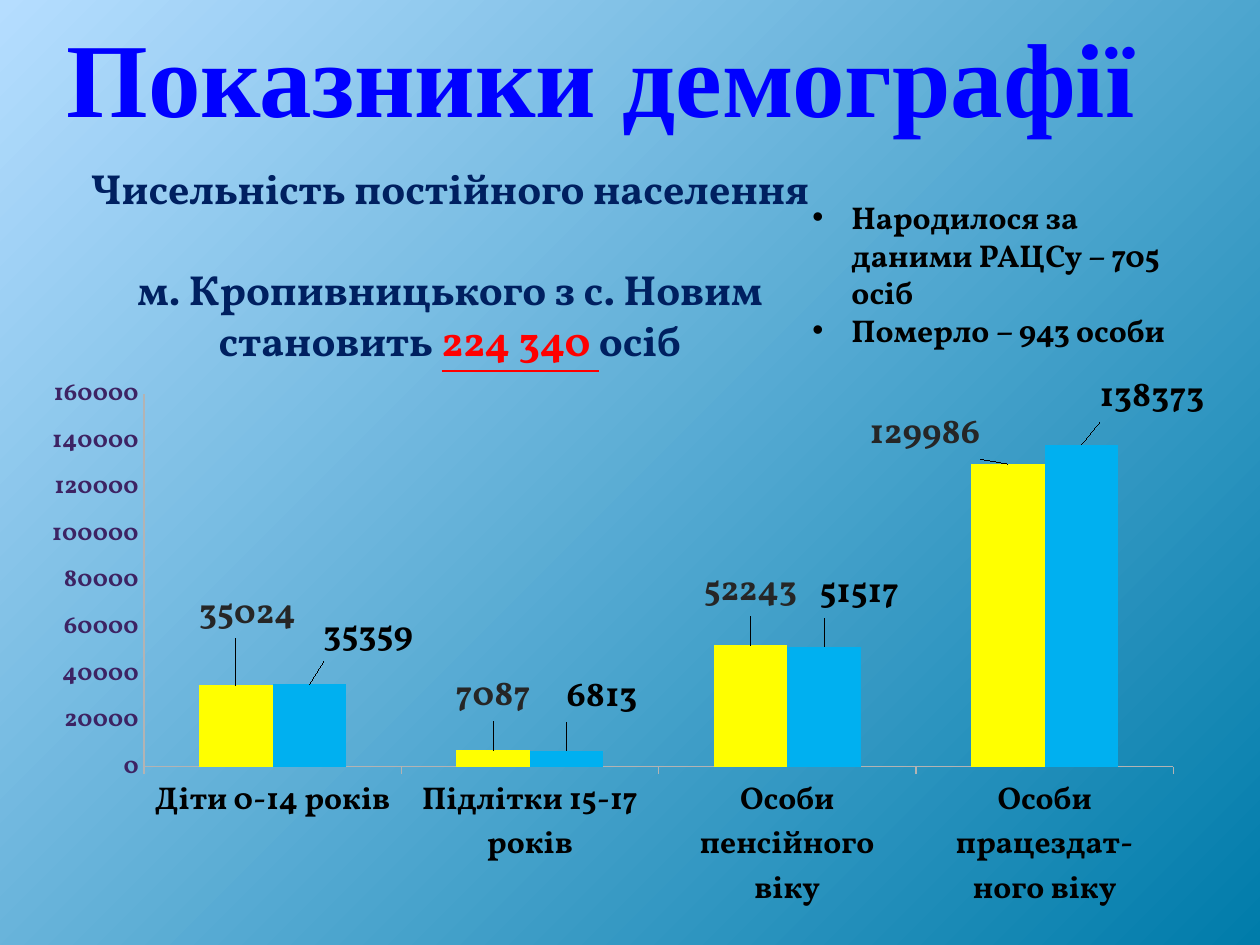
"""Build the demographic indicators slide with a clustered column chart."""
from lxml import etree
from pptx import Presentation
from pptx.chart.data import CategoryChartData
from pptx.dml.color import RGBColor
from pptx.enum.chart import XL_CHART_TYPE, XL_LABEL_POSITION, XL_TICK_MARK
from pptx.enum.text import MSO_ANCHOR, MSO_AUTO_SIZE, PP_ALIGN
from pptx.oxml import parse_xml
from pptx.oxml.ns import nsdecls, qn
from pptx.util import Inches, Pt

COLUMN = XL_CHART_TYPE.COLUMN_CLUSTERED
OUTSIDE = XL_LABEL_POSITION.OUTSIDE_END
TICK_OUT, TICK_NONE = XL_TICK_MARK.OUTSIDE, XL_TICK_MARK.NONE
LEFT, CENTER = PP_ALIGN.LEFT, PP_ALIGN.CENTER
TOP, BOTTOM = MSO_ANCHOR.TOP, MSO_ANCHOR.BOTTOM
NO_FIT = MSO_AUTO_SIZE.NONE

BLUE = RGBColor(0x00, 0x00, 0xFF)
NAVY = RGBColor(0x00, 0x20, 0x60)
RED = RGBColor(0xFF, 0x00, 0x00)
BLACK = RGBColor(0x00, 0x00, 0x00)
DARK = RGBColor(0x26, 0x26, 0x26)
PURPLE = RGBColor(0x3D, 0x23, 0x63)
YELLOW = RGBColor(0xFF, 0xFF, 0x00)
SKY = RGBColor(0x00, 0xB0, 0xF0)
GREY = RGBColor(0xB3, 0xB3, 0xB3)
PALE = RGBColor(0xB5, 0xDD, 0xFF)
TEAL = RGBColor(0x00, 0x7C, 0xAA)
SERIF, BODY = "Times New Roman", "Vollkorn"


def style(font, size, color, name=BODY):
    font.size, font.bold, font.name = Pt(size), True, name
    font.color.rgb = color


def manual_layout(x, y, extra=""):
    return parse_xml(
        f'<c:layout {nsdecls("c")}><c:manualLayout>{extra}'
        f'<c:x val="{x}"/><c:y val="{y}"/></c:manualLayout></c:layout>')


prs = Presentation()
prs.slide_width, prs.slide_height = Inches(10), Inches(7.5)
s = prs.slides.add_slide(prs.slide_layouts[1])

fill = s.background.fill
fill.gradient()
for stop, color, position in zip(fill.gradient_stops, (PALE, TEAL), (0, 1)):
    stop.color.rgb, stop.position = color, position
grad = s.background._cSld.find(".//" + qn("a:gradFill"))
grad.replace(grad.find(qn("a:lin")), parse_xml(
    f'<a:path {nsdecls("a")} path="circle"><a:fillToRect r="100000" b="100000"/></a:path>'))

title, body = s.placeholders
note = s.shapes.add_textbox(0, 0, 0, 0)
for sp, box, anchor in ((title, (0.43, 0, 9.37, 1.15), BOTTOM),
                        (body, (0.6, 1.24, 5.94, 1.57), TOP),
                        (note, (6.35, 1.52, 3.3, 1.01), TOP)):
    sp.left, sp.top, sp.width, sp.height = map(Inches, box)
    tf = sp.text_frame
    tf.word_wrap, tf.auto_size, tf.vertical_anchor = True, NO_FIT, anchor

p = title.text_frame.paragraphs[0]
p.alignment = LEFT
r = p.add_run()
r.text = "Показники демографії"
style(r.font, 60, BLUE, SERIF)

tf = body.text_frame
lines = (([("Чисельність постійного населення", NAVY)], 0),
         ([("м. Кропивницького з с. Новим", NAVY)], 29),
         ([("становить ", NAVY), ("224 340 ", RED), ("осіб", NAVY)], 0))
for i, (runs, before) in enumerate(lines):
    p = tf.add_paragraph() if i else tf.paragraphs[0]
    p.alignment, p.space_before = CENTER, Pt(before)
    pPr = p._p.get_or_add_pPr()
    pPr.set("marL", "0")
    pPr.set("indent", "0")
    etree.SubElement(pPr, qn("a:buNone"))
    for text, color in runs:
        r = p.add_run()
        r.text = text
        style(r.font, 24, color)
        r.font.underline = color == RED

tf = note.text_frame
for i, text in enumerate(("Народилося за даними РАЦСу – 705 осіб", "Померло – 943 особи")):
    p = tf.add_paragraph() if i else tf.paragraphs[0]
    pPr = p._p.get_or_add_pPr()
    pPr.set("marL", str(Inches(0.31)))
    pPr.set("indent", str(-Inches(0.31)))
    etree.SubElement(pPr, qn("a:buFont")).set("typeface", "Arial")
    etree.SubElement(pPr, qn("a:buChar")).set("char", "•")
    r = p.add_run()
    r.text = text
    style(r.font, 18, BLACK)

data = CategoryChartData()
data.categories = ["Діти 0-14 років", "Підлітки 15-17 років",
                   "Особи пенсійного віку", "Особи працездат- ного віку"]
data.add_series("Series 1", (35024, 7087, 52243, 129986))
data.add_series("Series 2", (35359, 6813, 51517, 138373))
chart = s.shapes.add_chart(COLUMN, Inches(0.28), Inches(2.9),
                           Inches(9.37), Inches(4.69), data).chart
chart.has_legend = chart.has_title = False
chart.font.name, chart.font.size = BODY, Pt(18)

plot = chart.plots[0]
plot.gap_width, plot.overlap, plot.vary_by_categories = 150, 0, False
area = chart._chartSpace.find(".//" + qn("c:plotArea"))
for old in area.findall(qn("c:layout")):
    area.remove(old)
layout = manual_layout(0.092, 0.049, '<c:layoutTarget val="inner"/>'
                       '<c:xMode val="edge"/><c:yMode val="edge"/>')
for tag, share in (("c:w", 0.872), ("c:h", 0.63)):
    etree.SubElement(layout[0], qn(tag)).set("val", str(share))
area.insert(0, layout)

for axis, size, color, tick, line in (
        (chart.category_axis, 18, BLACK, TICK_OUT, GREY),
        (chart.value_axis, 14, PURPLE, TICK_NONE, GREY)):
    axis.has_major_gridlines = False
    axis.major_tick_mark, axis.minor_tick_mark = tick, TICK_NONE
    axis.format.line.color.rgb = line
    style(axis.tick_labels.font, size, color)
axis = chart.value_axis
axis.minimum_scale, axis.maximum_scale, axis.major_unit = 0, 160000, 20000

looks = ((YELLOW, DARK, ((0.01, -0.07), (0, -0.04), (0, -0.04), (-0.07, 0))),
         (SKY, BLACK, ((0.05, -0.03), (0.03, -0.04), (0.03, -0.04), (0.06, -0.03))))
for ser, (color, text_color, offsets) in zip(plot.series, looks):
    ser.format.fill.solid()
    ser.format.fill.fore_color.rgb = color
    ser.invert_if_negative = False
    labels = ser.data_labels
    labels.show_value, labels.position = True, OUTSIDE
    style(labels.font, 20, text_color)
    for i, (dx, dy) in enumerate(offsets):
        label = ser.points[i].data_label
        label.position = OUTSIDE
        style(label.font, 20, text_color)
    for dLbl, (dx, dy) in zip(labels._element.findall(qn("c:dLbl")), offsets):
        dLbl.insert(1, manual_layout(dx, dy))

prs.save("out.pptx")
